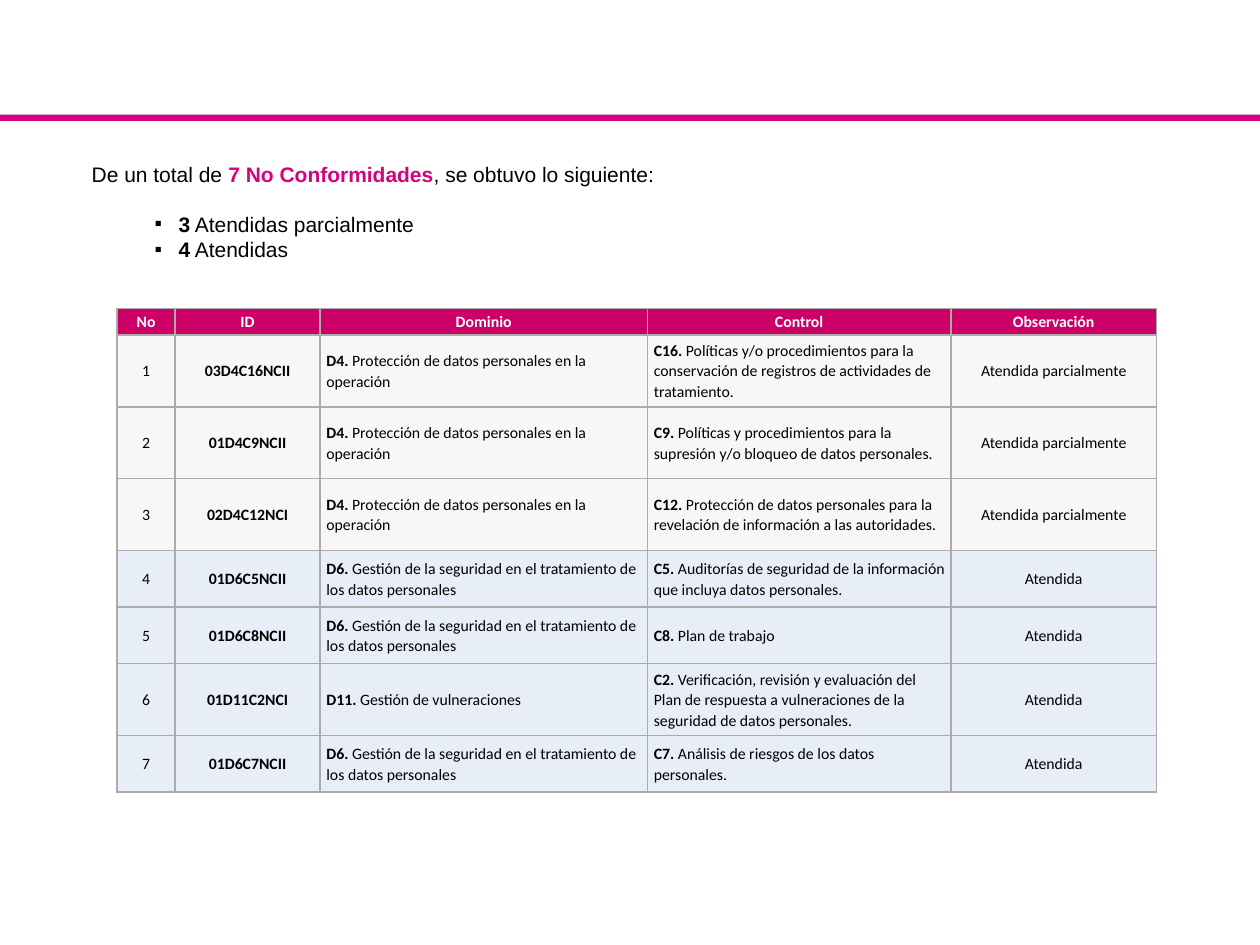
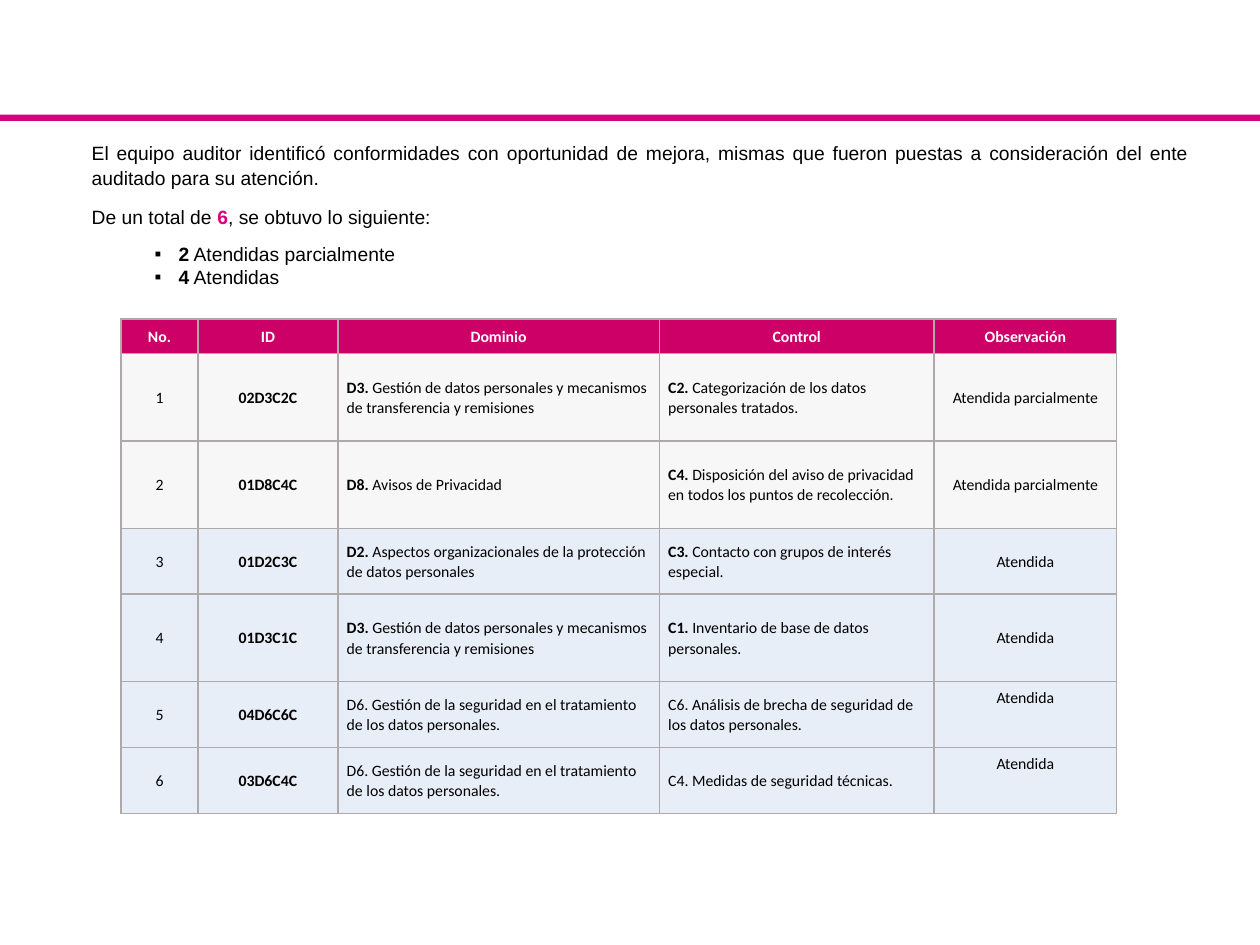
"""Audit follow-up slides: non-conformities and improvement opportunities."""
from dataclasses import dataclass

from lxml.etree import SubElement
from pptx import Presentation
from pptx.dml.color import RGBColor
from pptx.enum.shapes import MSO_SHAPE
from pptx.enum.text import MSO_ANCHOR, MSO_AUTO_SIZE, PP_ALIGN
from pptx.oxml.ns import qn
from pptx.util import Cm, Pt


@dataclass(frozen=True)
class Theme:
    band: str = "D6007F"
    accent: str = "D7007F"
    header: str = "CC0066"
    partial: str = "F7F7F7"
    attended: str = "E8EEF8"
    border: str = "AEAAAA"
    text: str = "000000"
    header_text: str = "FFFFFF"
    body_font: str = "Arial"
    table_font: str = "Calibri"
    findings_size: int = 12
    improvements_size: int = 11
    table_size: int = 9
    line_spacing: float = 1.07
    space_after: int = 8


PARTIAL = "Atendida parcialmente"
ATTENDED = "Atendida"
OPERATION = "**D4.** Protección de datos personales en la operación"
SECURITY = "**D6.** Gestión de la seguridad en el tratamiento de los datos personales"
TRANSFER = "**D3. **Gestión de datos personales y mecanismos de transferencia y remisiones"
SECURITY_PLAIN = "D6. Gestión de la seguridad en el tratamiento de los datos personales."
HEADINGS = ("ID", "Dominio", "Control", "Observación")

FINDINGS = (
    ("03D4C16NCII", OPERATION, "**C16.** Políticas y/o procedimientos para la conservación "
     "de registros de actividades de tratamiento.", PARTIAL),
    ("01D4C9NCII", OPERATION, "**C9.** Políticas y procedimientos para la supresión "
     "y/o bloqueo de datos personales.", PARTIAL),
    ("02D4C12NCI", OPERATION, "**C12.** Protección de datos personales para la revelación "
     "de información a las autoridades.", PARTIAL),
    ("01D6C5NCII", SECURITY, "**C5.** Auditorías de seguridad de la información "
     "que incluya datos personales.", ATTENDED),
    ("01D6C8NCII", SECURITY, "**C8.** Plan de trabajo", ATTENDED),
    ("01D11C2NCI", "**D11.** Gestión de vulneraciones", "**C2.** Verificación, revisión y "
     "evaluación del Plan de respuesta a vulneraciones de la seguridad de datos personales.",
     ATTENDED),
    ("01D6C7NCII", SECURITY, "**C7.** Análisis de riesgos de los datos personales.", ATTENDED),
)

IMPROVEMENTS = (
    ("02D3C2C", TRANSFER, "**C2. **Categorización de los datos personales tratados.", PARTIAL),
    ("01D8C4C", "**D8. **Avisos de Privacidad", "**C4. **Disposición del aviso de privacidad "
     "en todos los puntos de recolección.", PARTIAL),
    ("01D2C3C", "**D2. **Aspectos organizacionales de la protección de datos personales",
     "**C3. **Contacto con grupos de interés especial.", ATTENDED),
    ("01D3C1C", TRANSFER, "**C1. **Inventario de base de datos personales.", ATTENDED),
    ("04D6C6C", SECURITY_PLAIN, "C6. Análisis de brecha de seguridad de los datos personales.",
     ATTENDED),
    ("03D6C4C", SECURITY_PLAIN, "C4. Medidas de seguridad técnicas.", ATTENDED),
)


class AuditDeck:
    def __init__(self, theme):
        self.theme = theme
        self.deck = Presentation()
        self.deck.slide_width, self.deck.slide_height = Cm(25.4), Cm(19.05)
        self.slide = None

    def new_slide(self):
        self.slide = self.deck.slides.add_slide(self.deck.slide_layouts[6])
        band = self.slide.shapes.add_shape(
            MSO_SHAPE.RECTANGLE, 0, Cm(2.31), self.deck.slide_width, Cm(0.13))
        band.shadow.inherit = False
        band.fill.solid()
        band.fill.fore_color.rgb = RGBColor.from_string(self.theme.band)
        band.line.fill.background()

    def set_text(self, paragraph, text, font, size, color, accent=None):
        paragraph.font.name = font
        paragraph.font.size = Pt(size)
        paragraph.font.color.rgb = RGBColor.from_string(color)
        for order, piece in enumerate(text.split("**")):
            if piece:
                run = paragraph.add_run()
                run.text = piece
                run.font.bold = order % 2 == 1
                if accent and run.font.bold:
                    run.font.color.rgb = RGBColor.from_string(accent)

    def summary(self, height, size, statements, counts, top_inset, gap, spacing):
        box = self.slide.shapes.add_textbox(Cm(1.6), Cm(2.69), Cm(22.63), Cm(height))
        frame = box.text_frame
        frame.word_wrap = True
        frame.auto_size = MSO_AUTO_SIZE.SHAPE_TO_FIT_TEXT
        frame.margin_top = Cm(top_inset)
        for order, line in enumerate(statements + counts):
            paragraph = frame.add_paragraph() if order else frame.paragraphs[0]
            paragraph.alignment = PP_ALIGN.JUSTIFY
            if order < len(statements):
                paragraph.line_spacing = spacing
                paragraph.space_after = Pt(gap)
                accent = self.theme.accent
            else:
                self.bullet(paragraph)
                accent = None
            self.set_text(paragraph, line, self.theme.body_font, size, self.theme.text, accent)

    def bullet(self, paragraph):
        paragraph.level = 1
        properties = paragraph._p.get_or_add_pPr()
        properties.set("marL", str(Cm(1.75)))
        properties.set("indent", str(-Cm(0.48)))
        SubElement(properties, qn("a:buFont"), typeface=self.theme.body_font)
        SubElement(properties, qn("a:buChar"), char="▪")

    def cell(self, cell, text, fill, color, inset, centred):
        cell.vertical_anchor = MSO_ANCHOR.MIDDLE
        cell.margin_left = cell.margin_right = Cm(inset)
        cell.margin_top = cell.margin_bottom = 0
        for side in ("lnL", "lnR", "lnT", "lnB"):
            edge = SubElement(cell._tc.get_or_add_tcPr(), qn(f"a:{side}"), w=str(Pt(1)))
            paint = SubElement(edge, qn("a:solidFill"))
            SubElement(paint, qn("a:srgbClr"), val=self.theme.border)
        cell.fill.solid()
        cell.fill.fore_color.rgb = RGBColor.from_string(fill)
        paragraph = cell.text_frame.paragraphs[0]
        paragraph.alignment = PP_ALIGN.CENTER if centred else PP_ALIGN.LEFT
        paragraph.line_spacing = self.theme.line_spacing
        paragraph.space_after = Pt(self.theme.space_after)
        self.set_text(paragraph, text, self.theme.table_font, self.theme.table_size, color)

    def results(self, left, top, widths, heights, number_heading, records, inset):
        table = self.slide.shapes.add_table(
            len(heights), len(widths), Cm(left), Cm(top),
            Cm(sum(widths)), Cm(sum(heights))).table
        table.first_row = table.horz_banding = False
        for column, width in zip(table.columns, widths):
            column.width = Cm(width)
        for row, height in zip(table.rows, heights):
            row.height = Cm(height)
        for column, heading in enumerate((number_heading, *HEADINGS)):
            self.cell(table.cell(0, column), f"**{heading}**", self.theme.header,
                      self.theme.header_text, inset, True)
        for number, (code, domain, control, status) in enumerate(records, 1):
            fill = self.theme.partial if status == PARTIAL else self.theme.attended
            values = (str(number), f"**{code}**", domain, control, status)
            for column, value in enumerate(values):
                self.cell(table.cell(number, column), value, fill, self.theme.text,
                          inset, column not in (2, 3))
        return table


def main():
    theme = Theme()
    audit = AuditDeck(theme)

    audit.new_slide()
    audit.summary(
        2.77, theme.findings_size,
        ("De un total de **7 No Conformidades**, se obtuvo lo siguiente:",),
        ("**3** Atendidas parcialmente", "**4** Atendidas"),
        top_inset=0.57, gap=13.8, spacing=1.0)
    tall, short = 1.45, 1.14
    audit.results(
        2.36, 6.22, (1.17, 2.92, 6.6, 6.12, 4.14),
        (0.53, tall, tall, tall, short, short, tall, short), "No", FINDINGS, inset=0.13)

    audit.new_slide()
    audit.summary(
        3.73, theme.improvements_size,
        ("El equipo auditor identificó conformidades con oportunidad de mejora, mismas que "
         "fueron puestas a consideración del ente auditado para su atención.",
         "De un total de **6**, se obtuvo lo siguiente:"),
        ("**2** Atendidas parcialmente", "**4** Atendidas"),
        top_inset=0.13, gap=theme.space_after, spacing=theme.line_spacing)
    tall, short = 1.76, 1.33
    improvements = audit.results(
        2.44, 6.43, (1.55, 2.82, 6.48, 5.54, 3.68),
        (0.7, tall, tall, short, tall, short, short), "No.", IMPROVEMENTS, inset=0.18)
    for raised_row in (5, 6):
        improvements.cell(raised_row, 4).margin_bottom = Cm(0.69)

    audit.deck.save("out.pptx")


if __name__ == "__main__":
    main()
